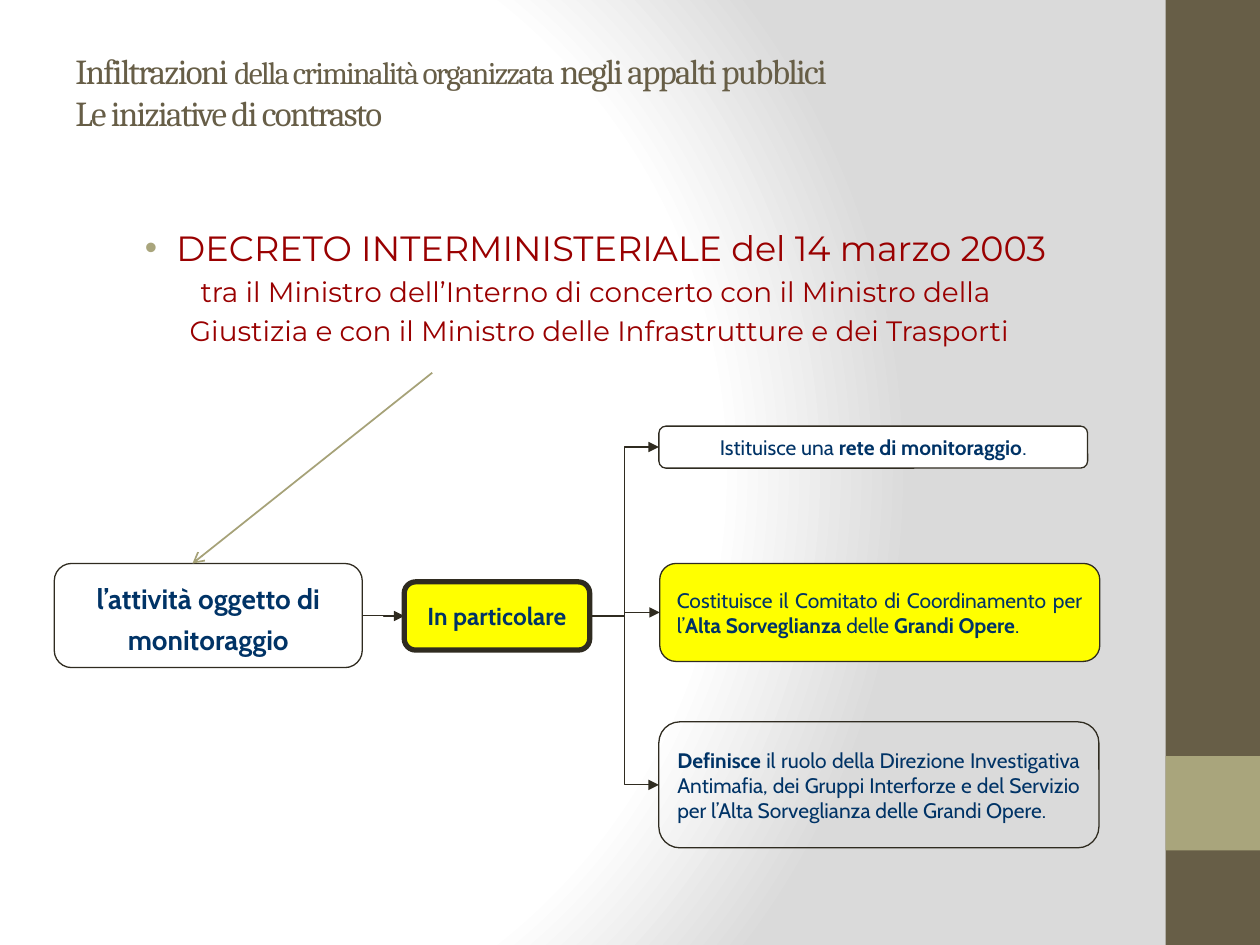
from pptx import Presentation
from pptx.dml.color import RGBColor as RGB
from pptx.enum.shapes import MSO_CONNECTOR as Conn, MSO_SHAPE as Shape
from pptx.enum.text import MSO_ANCHOR as Anchor, PP_ALIGN as Align
from pptx.oxml import parse_xml
from pptx.oxml.ns import nsdecls, qn
from pptx.util import Pt
from lxml.etree import SubElement as Sub

WHITE = RGB(0xFF, 0xFF, 0xFF)
GRAY = RGB(0xDA, 0xDA, 0xDA)
BROWN = RGB(0x67, 0x5E, 0x47)
SAND = RGB(0xA9, 0xA5, 0x7C)
KHAKI = RGB(0xA6, 0xA2, 0x78)
RED = RGB(0x99, 0x00, 0x00)
NAVY = RGB(0x00, 0x33, 0x66)
DARK = RGB(0x2F, 0x2B, 0x20)
YELLOW = RGB(0xFF, 0xFF, 0x00)


class Deck:
    head, body, label = "Cambria", "Montserrat", "Cabin"

    def __init__(self, wide, high):
        self.prs = Presentation()
        self.prs.slide_width, self.prs.slide_height = Pt(wide), Pt(high)
        self.slide = self.prs.slides.add_slide(self.prs.slide_layouts[6])
        self.shapes = self.slide.shapes

    def glow(self, stops):
        self.slide.background.fill.solid()
        back = self.slide.element.find(".//" + qn("p:bgPr"))
        marks = "".join(
            f'<a:gs pos="{pos * 1000}"><a:srgbClr val="{color}"/></a:gs>'
            for pos, color in stops)
        back.replace(back[0], parse_xml(
            f'<a:gradFill {nsdecls("a")} rotWithShape="1"><a:gsLst>{marks}</a:gsLst>'
            '<a:path path="circle"><a:fillToRect l="20000" t="50000" r="100000" '
            'b="50000"/></a:path></a:gradFill>'))

    def place(self, kind, area, fill):
        shape = self.shapes.add_shape(kind, *map(Pt, area))
        shape.shadow.inherit = False
        if fill is None:
            shape.fill.background()
        else:
            shape.fill.solid()
            shape.fill.fore_color.rgb = fill
        return shape

    def band(self, area, fill):
        self.place(Shape.RECTANGLE, area, fill).line.fill.background()

    def style(self, para, parts, font, color, align):
        para.alignment = align
        for text, size, bold in parts:
            run = para.add_run()
            run.text = text
            run.font.name, run.font.size = font, Pt(size)
            run.font.bold = bold
            run.font.color.rgb = color

    def text(self, area, lines, font, color, align, anchor):
        frame = self.shapes.add_textbox(*map(Pt, area)).text_frame
        frame.word_wrap = True
        frame.vertical_anchor = anchor
        for i, parts in enumerate(lines):
            para = frame.add_paragraph() if i else frame.paragraphs[0]
            self.style(para, parts, font, color, align)
        return frame.paragraphs

    def title(self, area, lines):
        for para in self.text(area, lines, self.head, BROWN, Align.LEFT, Anchor.MIDDLE):
            for run in para.runs:
                run._r.get_or_add_rPr().set("spc", "-100")

    def decree(self, area, lines):
        paras = self.text(area, lines, self.body, RED, Align.CENTER, Anchor.TOP)
        for i, para in enumerate(paras):
            props = para._p.get_or_add_pPr()
            left, first = (9, 0) if i else (27, -18)
            props.set("marL", str(Pt(left)))
            props.set("indent", str(Pt(first)))
            if i:
                para.space_before = Pt(3.2)
            else:
                Sub(Sub(props, qn("a:buClr")), qn("a:srgbClr"), val=str(SAND))
                Sub(props, qn("a:buFont"), typeface="Arial")
                Sub(props, qn("a:buChar"), char="•")

    def box(self, area, parts, fill=None, align=Align.CENTER, width=0.75, space=1):
        shape = self.place(Shape.ROUNDED_RECTANGLE, area, fill)
        shape.line.color.rgb, shape.line.width = DARK, Pt(width)
        frame = shape.text_frame
        frame.word_wrap = True
        frame.vertical_anchor = Anchor.MIDDLE
        para = frame.paragraphs[0]
        self.style(para, parts, self.label, NAVY, align)
        para.line_spacing = float(space)
        return shape

    def arrow(self, kind, ends, color, width, tip):
        link = self.shapes.add_connector(kind, *map(Pt, ends))
        link.line.color.rgb, link.line.width = color, Pt(width)
        props = link._element.spPr
        Sub(props.find(qn("a:ln")), qn("a:tailEnd"), type=tip)
        Sub(props, qn("a:effectLst"))
        return link

    def join(self, start, end):
        link = self.arrow(Conn.ELBOW, (0, 0, 9, 9), DARK, 0.75, "triangle")
        link.begin_connect(start, 3)
        link.end_connect(end, 1)

    def save(self):
        self.prs.save("out.pptx")


def main():
    deck = Deck(720, 540)
    deck.glow([(0, WHITE), (75, WHITE), (100, GRAY)])
    deck.band((666, 0, 54, 540), BROWN)
    deck.band((666, 432, 54, 54), SAND)

    deck.title((36, 21.6, 600, 61.2), [
        [("Infiltrazioni ", 20, False),
         ("della criminalità organizzata ", 18, False),
         ("negli appalti pubblici", 20, False)],
        [("Le iniziative di contrasto", 20, False)]])
    deck.decree((36, 126, 600, 378), [
        [("DECRETO INTERMINISTERIALE del 14 marzo 2003", 20, False)],
        [("tra il Ministro dell’Interno di concerto con il Ministro della", 16, False)],
        [(" Giustizia e con il Ministro delle Infrastrutture e dei Trasporti", 16, False)]])

    task = deck.box((31, 322, 176, 59.5),
                    [("l’attività oggetto di monitoraggio", 16, True)], space=1.2)
    hub = deck.box((231, 332.5, 106, 39), [("In particolare", 14, True)],
                   YELLOW, width=3)
    net = deck.box((376.5, 243.5, 245, 24), [
        ("Istituisce una ", 12, False),
        ("rete di monitoraggio", 12, True),
        (".", 12, False)], WHITE)
    board = deck.box((377, 322, 251.5, 56), [
        ("Costituisce il Comitato di Coordinamento per l’", 12, False),
        ("Alta Sorveglianza", 12, True),
        (" delle ", 12, False),
        ("Grandi Opere", 12, True),
        (".", 12, False)], YELLOW, Align.JUSTIFY)
    role = deck.box((376.5, 412.5, 251.5, 72), [
        ("Definisce", 12, True),
        (" il ruolo della Direzione Investigativa Antimafia, dei Gruppi Interforze "
         "e del Servizio per l’Alta Sorveglianza delle Grandi Opere.", 12, False)],
        align=Align.JUSTIFY)

    deck.join(task, hub)
    for item in (net, board, role):
        deck.join(hub, item)
    deck.arrow(Conn.STRAIGHT, (247, 213, 110, 322), KHAKI, 1, "arrow")
    deck.save()


if __name__ == "__main__":
    main()
